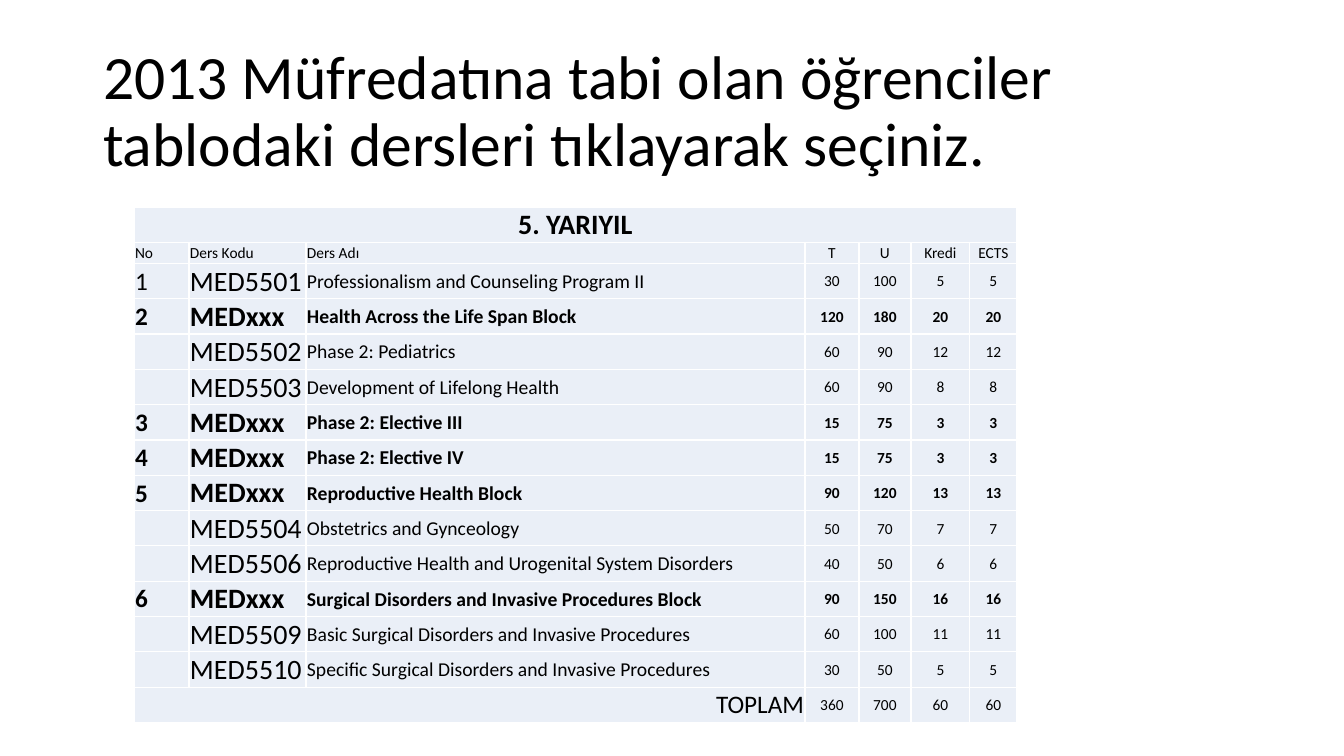
from lxml.etree import SubElement
from pptx import Presentation
from pptx.dml.color import RGBColor
from pptx.enum.text import MSO_ANCHOR as Anchor, MSO_AUTO_SIZE as AutoSize, PP_ALIGN as Align
from pptx.oxml.ns import qn
from pptx.util import Emu, Pt

COLORS = {"text": "000000", "cell": "EAEFF7", "border": "FFFFFF"}
FONT = "Calibri"


def px(length):
    return Emu(round(length * 914400 / 100.8))


def format_text(text_frame, size, bold, align):
    paragraph = text_frame.paragraphs[0]
    paragraph.alignment = align
    for run in paragraph.runs:
        run.font.name = FONT
        run.font.size = Pt(size)
        run.font.bold = bold
        run.font.color.rgb = RGBColor.from_string(COLORS["text"])


presentation = Presentation()
presentation.slide_width, presentation.slide_height = px(1344), px(756)
slide = presentation.slides.add_slide(presentation.slide_layouts[5])

title = slide.shapes.title
title.left, title.top, title.width, title.height = px(93), px(40), px(1159), px(146)
title_frame = title.text_frame
title_frame.text = "2013 Müfredatına tabi olan öğrenciler tablodaki dersleri tıklayarak seçiniz."
title_frame.word_wrap = True
title_frame.auto_size = AutoSize.NONE
title_frame.vertical_anchor = Anchor.MIDDLE
title_frame.paragraphs[0].line_spacing = 0.9
format_text(title_frame, 44, False, Align.LEFT)

heading = ["5. YARIYIL", "", "", "", "", "", ""]
column_names = ["No", "Ders Kodu", "Ders Adı", "T", "U", "Kredi", "ECTS"]
# Credits and ECTS are always equal, so each course lists them once.
courses = [
    ("1", "MED5501", "Professionalism and Counseling Program II", 30, 100, 5),
    ("2", "MEDxxx", "Health Across the Life Span Block", 120, 180, 20),
    ("", "MED5502", "Phase 2: Pediatrics", 60, 90, 12),
    ("", "MED5503", "Development of Lifelong Health", 60, 90, 8),
    ("3", "MEDxxx", "Phase 2: Elective III", 15, 75, 3),
    ("4", "MEDxxx", "Phase 2: Elective IV", 15, 75, 3),
    ("5", "MEDxxx", "Reproductive Health Block", 90, 120, 13),
    ("", "MED5504", "Obstetrics and Gynceology", 50, 70, 7),
    ("", "MED5506", "Reproductive Health and Urogenital System Disorders", 40, 50, 6),
    ("6", "MEDxxx", "Surgical Disorders and Invasive Procedures Block", 90, 150, 16),
    ("", "MED5509", "Basic Surgical Disorders and Invasive Procedures", 60, 100, 11),
    ("", "MED5510", "Specific Surgical Disorders and Invasive Procedures", 30, 50, 5),
]
total = ["TOPLAM", "", "", 360, 700, 60, 60]
rows = [heading, column_names, *([*course, course[-1]] for course in courses), total]
last_row = len(rows) - 1

column_widths = [55, 117, 499, 54, 52, 59, 47]
body_height = 459
row_heights = [35, 21] + [body_height / (len(courses) + 1)] * (len(courses) + 1)
course_sizes = [18, 20, 14, 11, 11, 11, 11]

table = slide.shapes.add_table(
    len(rows), len(column_widths), px(134), px(207), px(sum(column_widths)), px(sum(row_heights))
).table
table.first_row = table.horz_banding = False
for column, width in zip(table.columns, column_widths):
    column.width = px(width)
for row, height in zip(table.rows, row_heights):
    row.height = px(height)
table.cell(0, 0).merge(table.cell(0, len(column_widths) - 1))
table.cell(last_row, 0).merge(table.cell(last_row, 2))

for row_index, values in enumerate(rows):
    for column_index, value in enumerate(values):
        cell = table.cell(row_index, column_index)
        cell.text = str(value)
        cell.vertical_anchor = Anchor.MIDDLE
        cell.margin_left = cell.margin_right = cell.margin_top = px(1)
        cell.margin_bottom = 0

        size = course_sizes[column_index]
        bold = values[1] == "MEDxxx"
        align = Align.CENTER if column_index > 2 else Align.LEFT
        if row_index == 0:
            size, bold, align = 20, True, Align.CENTER
        elif row_index == 1:
            size = 11
        elif row_index == last_row and column_index == 0:
            align = Align.RIGHT
        format_text(cell.text_frame, size, bold, align)

        cell_properties = cell._tc.get_or_add_tcPr()
        for side in ("a:lnL", "a:lnR", "a:lnT", "a:lnB"):
            border = SubElement(cell_properties, qn(side), w=str(Pt(1)))
            border_fill = SubElement(border, qn("a:solidFill"))
            SubElement(border_fill, qn("a:srgbClr"), val=COLORS["border"])
        cell.fill.solid()
        cell.fill.fore_color.rgb = RGBColor.from_string(COLORS["cell"])

presentation.save("out.pptx")
